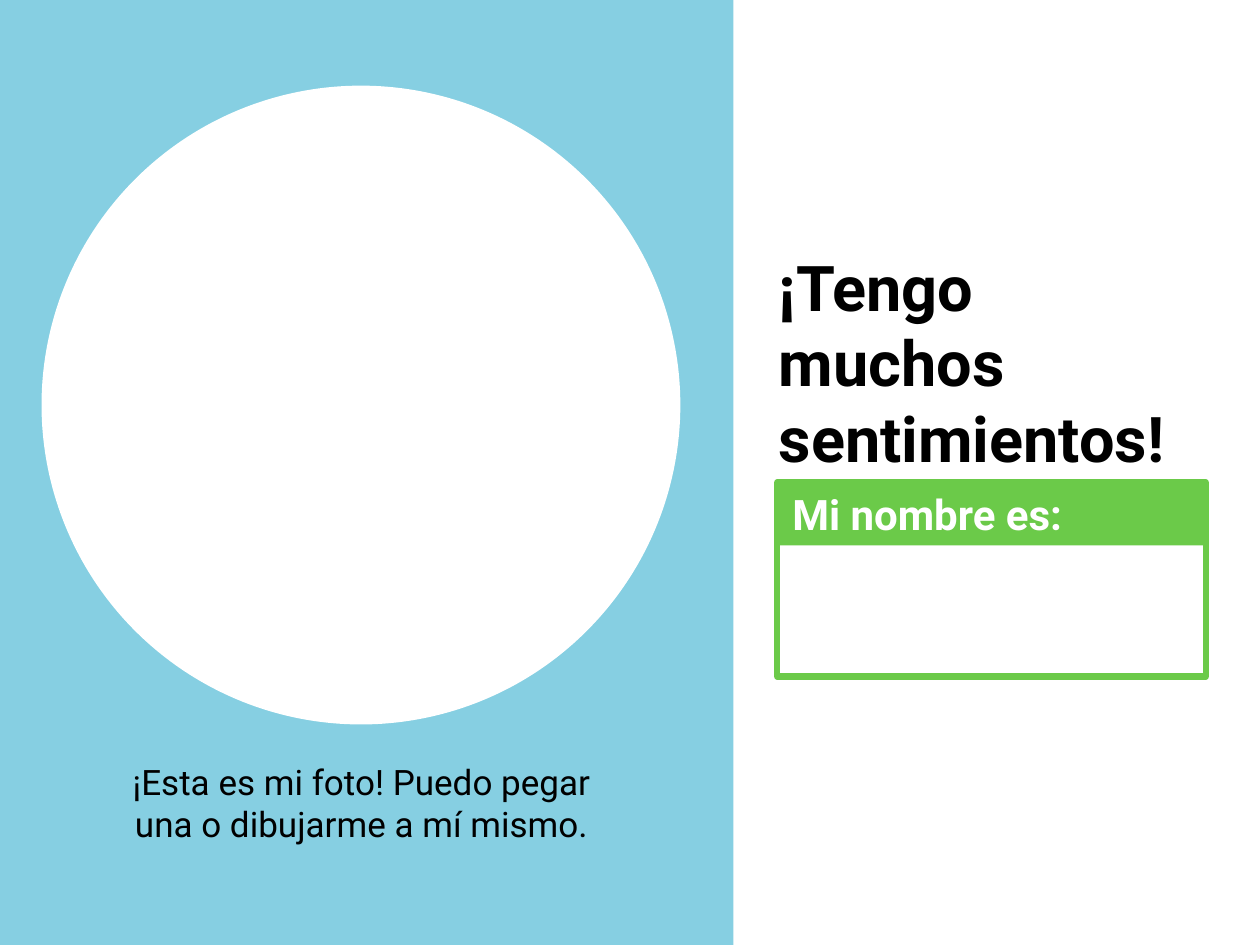
from pptx import Presentation
from pptx.dml.color import RGBColor
from pptx.enum.shapes import MSO_SHAPE
from pptx.enum.text import MSO_ANCHOR, MSO_AUTO_SIZE, PP_ALIGN
from pptx.util import Inches, Pt

BLACK = RGBColor(0x00, 0x00, 0x00)
WHITE = RGBColor(0xFF, 0xFF, 0xFF)
GREEN = RGBColor(0x6B, 0xCA, 0x49)
SKY = RGBColor(0x86, 0xCF, 0xE2)


def write(holder, text, size, color=BLACK, bold=False, align=PP_ALIGN.LEFT):
    frame = holder.text_frame
    frame.text = text
    frame.word_wrap = True
    frame.auto_size = MSO_AUTO_SIZE.SHAPE_TO_FIT_TEXT
    frame.vertical_anchor = MSO_ANCHOR.TOP
    paragraph = frame.paragraphs[0]
    paragraph.alignment = align
    font = paragraph.runs[0].font
    font.name = "Roboto"
    font.size = Pt(size)
    font.bold = bold
    font.color.rgb = color


def add_block(kind, left, top, width, height, fill=None, line=None):
    block = slide.shapes.add_shape(
        kind, Inches(left), Inches(top), Inches(width), Inches(height))
    block.shadow.inherit = False
    if fill is None:
        block.fill.background()
    else:
        block.fill.solid()
        block.fill.fore_color.rgb = fill
    if line is None:
        block.line.fill.background()
    else:
        block.line.color.rgb = line
        block.line.width = Pt(3.5)
    return block


prs = Presentation()
prs.slide_width = Inches(10)
prs.slide_height = Inches(7.5)
slide = prs.slides.add_slide(prs.slide_layouts[5])

# Title
title = slide.shapes.title
title.left, title.top = Inches(6.08), Inches(1.92)
title.width, title.height = Inches(3.4), Inches(1.31)
write(title, "¡Tengo muchos sentimientos!", size=36, bold=True)

# Name tag: header band and outlined writing space
name_header = add_block(MSO_SHAPE.RECTANGLE, 6.19, 3.83, 3.4, 0.5, fill=GREEN)
write(name_header, "Mi nombre es:", size=24, color=WHITE, bold=True)
add_block(MSO_SHAPE.RECTANGLE, 6.17, 3.83, 3.4, 1.54, line=GREEN)

# Photo panel: background, caption and round photo space
add_block(MSO_SHAPE.RECTANGLE, 0, 0, 5.82, 7.5, fill=SKY)
caption = slide.shapes.add_textbox(
    Inches(0.85), Inches(5.99), Inches(4.04), Inches(0.77))
write(caption, "¡Esta es mi foto! Puedo pegar una o dibujarme a mí mismo.",
      size=20, align=PP_ALIGN.CENTER)
add_block(MSO_SHAPE.OVAL, 0.33, 0.68, 5.07, 5.07, fill=WHITE)

prs.save("out.pptx")
